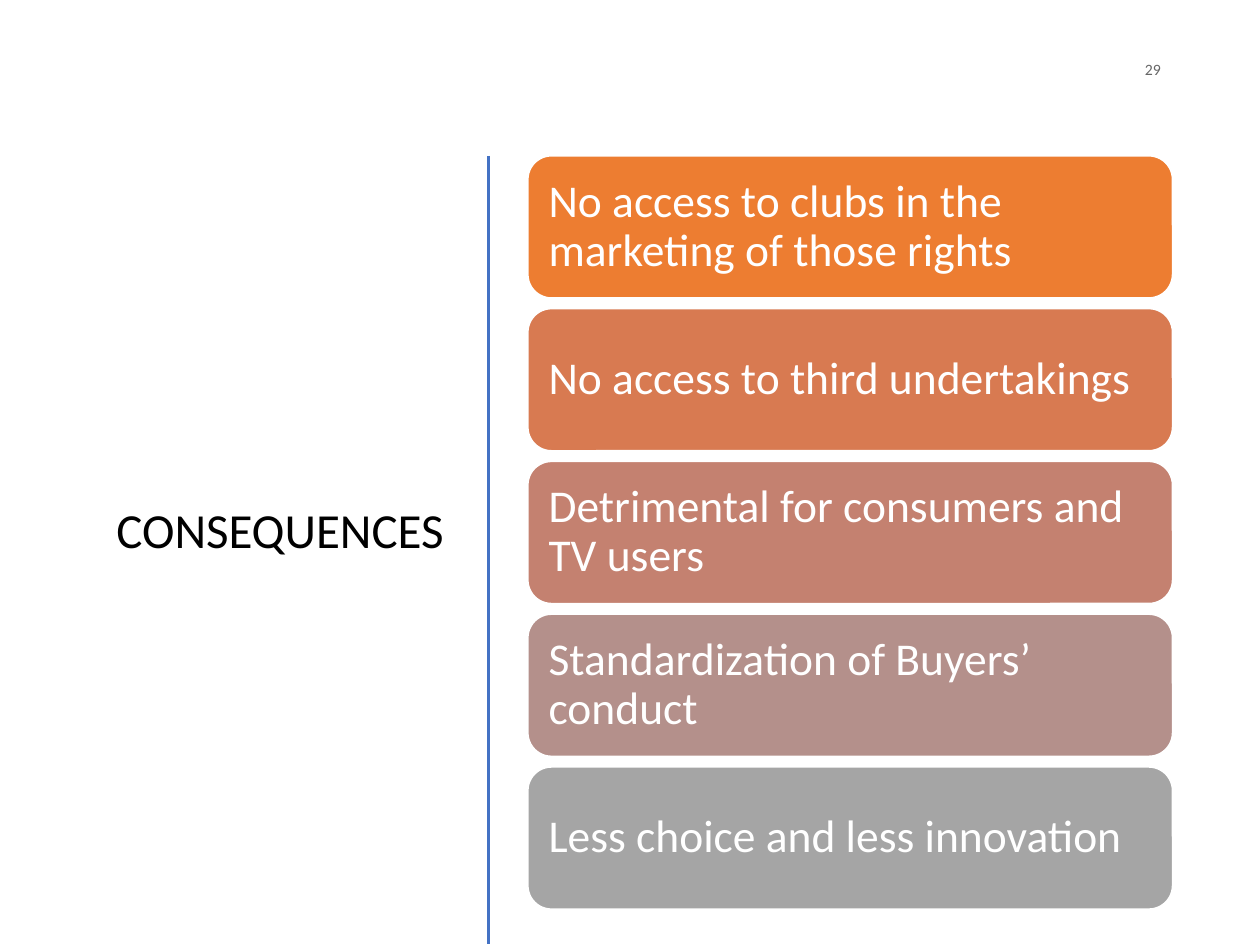
"""Build the slide that lists the consequences in five stacked cards."""
from lxml.etree import SubElement
from pptx import Presentation
from pptx.dml.color import RGBColor
from pptx.enum.shapes import MSO_CONNECTOR as Connector, MSO_SHAPE as Shape
from pptx.enum.text import MSO_ANCHOR as Anchor, PP_ALIGN as Align
from pptx.oxml.ns import qn
from pptx.util import Cm, Pt

BLACK = RGBColor(0x00, 0x00, 0x00)
WHITE = RGBColor(0xFF, 0xFF, 0xFF)
GREY = RGBColor(0x66, 0x66, 0x66)
BLUE = RGBColor(0x44, 0x72, 0xC4)
CARDS = [
    ("No access to clubs in the marketing of those rights", RGBColor(0xED, 0x7D, 0x31)),
    ("No access to third undertakings", RGBColor(0xD8, 0x7A, 0x51)),
    ("Detrimental for consumers and TV users", RGBColor(0xC4, 0x81, 0x70)),
    ("Standardization of Buyers’ conduct", RGBColor(0xB4, 0x90, 0x8B)),
    ("Less choice and less innovation", RGBColor(0xA5, 0xA5, 0xA5)),
]
CARD_TOP, CARD_PITCH = 3.14, 3.08


def write_text(shape, text, *, size, color, align=Align.LEFT, spacing=0.9):
    frame = shape.text_frame
    frame.word_wrap = True
    frame.vertical_anchor = Anchor.MIDDLE
    para = frame.paragraphs[0]
    para.alignment = align
    para.line_spacing = spacing
    span = para.add_run()
    span.text = text
    span.font.name = "Calibri"
    span.font.size = Pt(size)
    span.font.color.rgb = color


def add_label(page, text, left, top, width, height, **style):
    box = page.shapes.add_textbox(Cm(left), Cm(top), Cm(width), Cm(height))
    write_text(box, text, align=Align.RIGHT, **style)


def add_divider(page, left, top, bottom):
    line = page.shapes.add_connector(
        Connector.STRAIGHT, Cm(left), Cm(top), Cm(left), Cm(bottom))
    line.line.color.rgb = BLUE
    line.line.width = Pt(2)
    SubElement(line._element.spPr, qn("a:effectLst"))


def add_card(page, text, color, top):
    card = page.shapes.add_shape(
        Shape.ROUNDED_RECTANGLE, Cm(10.64), Cm(top), Cm(13), Cm(2.87))
    card.shadow.inherit = False
    card.fill.solid()
    card.fill.fore_color.rgb = color
    card.line.color.rgb = WHITE
    card.line.width = Pt(1)
    frame = card.text_frame
    frame.margin_left = frame.margin_right = Cm(0.28)
    frame.margin_top = frame.margin_bottom = Cm(0.28)
    write_text(card, text, size=26, color=WHITE)


def main():
    deck = Presentation()
    deck.slide_width, deck.slide_height = Cm(25.4), Cm(19.05)
    page = deck.slides.add_slide(deck.slide_layouts[6])
    add_label(page, "CONSEQUENCES", 0.99, 2.97, 8.2, 15.52, size=28, color=BLACK)
    add_label(page, "29", 17.93, 0.89, 5.72, 1.02, size=9, color=GREY, spacing=1.0)
    add_divider(page, 9.85, 3.14, 19.03)
    for index, (text, color) in enumerate(CARDS):
        add_card(page, text, color, CARD_TOP + index * CARD_PITCH)
    deck.save("out.pptx")


if __name__ == "__main__":
    main()
